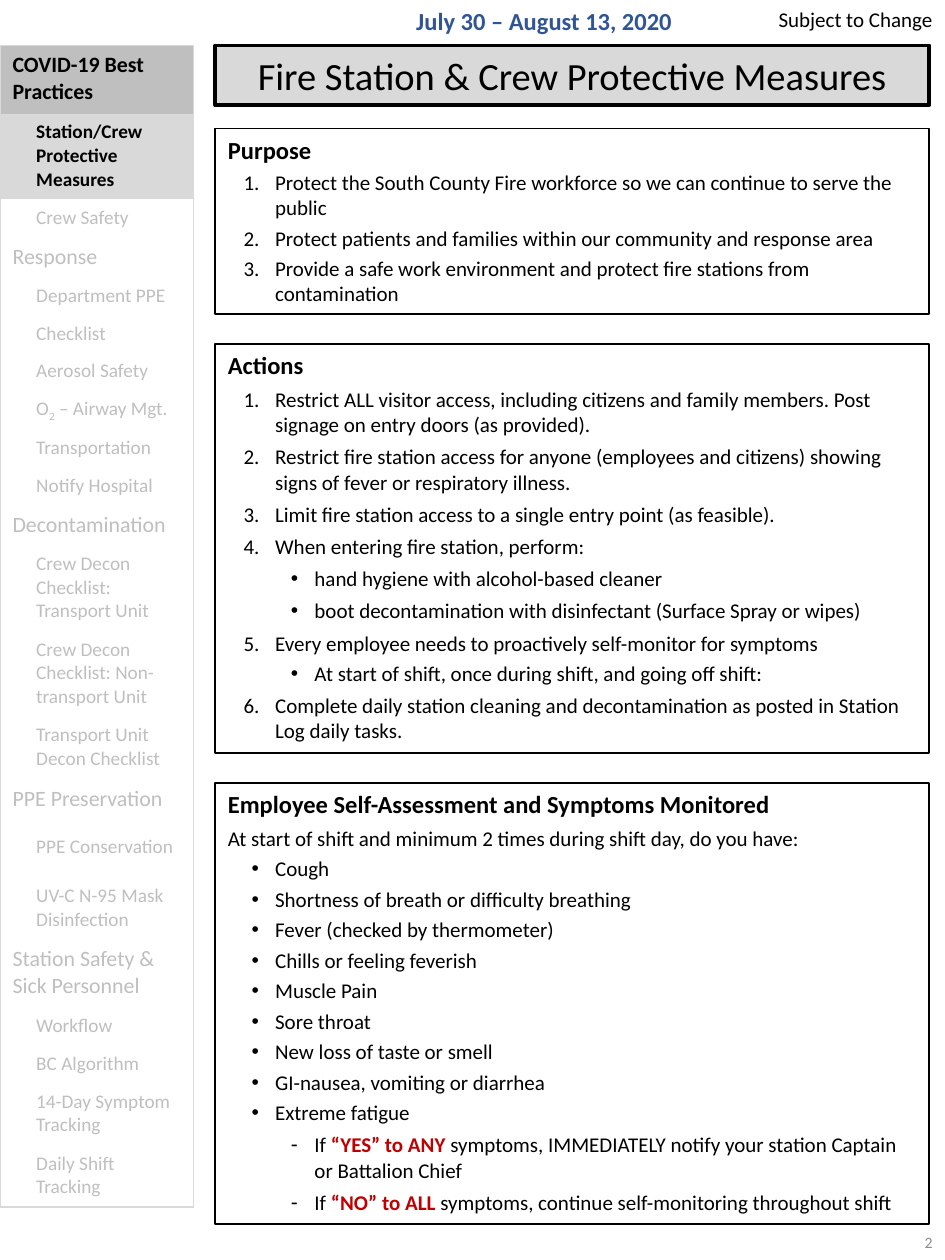
"""Build the fire station protective measures slide."""
from pptx import Presentation
from pptx.dml.color import RGBColor
from pptx.enum import text as txt
from pptx.oxml import parse_xml
from pptx.oxml.ns import nsdecls
from pptx.util import Pt

PLAIN = "{2D5ABB26-0587-4C30-8999-92F81FD0307C}"
ALIGN = txt.PP_ALIGN
LEFT, WIDTH = 123, 408

KINDS = {
    "head": (0, 0, 0, None),
    "text": (0, 0, 0, None),
    "num": (0, 27, 18, "num"),
    "dot": (0, 27, 13.5, "•"),
    "sub": (1, 49.5, 13.5, "•"),
    "dash": (3, 49.5, 13.5, "-"),
}
PURPOSE = [
    ("head", "Purpose", 0),
    ("num", "Protect the South County Fire workforce so we can continue to serve the public", 3),
    ("num", "Protect patients and families within our community and response area", 3),
    ("num", "Provide a safe work environment and protect fire stations from contamination", 3),
]
ACTIONS = [
    ("head", "Actions", 0),
    ("num", "Restrict ALL visitor access, including citizens and family members. "
            "Post signage on entry doors (as provided).", 4),
    ("num", "Restrict fire station access for anyone (employees and citizens) "
            "showing signs of fever or respiratory illness.", 4),
    ("num", "Limit fire station access to a single entry point (as feasible).", 4),
    ("num", "When entering fire station, perform:", 4),
    ("sub", "hand hygiene with alcohol-based cleaner", 4),
    ("sub", "boot decontamination with disinfectant (Surface Spray or wipes)", 4),
    ("num", "Every employee needs to proactively self-monitor for symptoms", 4),
    ("sub", "At start of shift, once during shift, and going off shift:", 3),
    ("num", "Complete daily station cleaning and decontamination as posted in "
            "Station Log daily tasks.", 4),
]
SIGNS = ["Cough", "Shortness of breath or difficulty breathing",
         "Fever (checked by thermometer)", "Chills or feeling feverish",
         "Muscle Pain", "Sore throat", "New loss of taste or smell",
         "GI-nausea, vomiting or diarrhea", "Extreme fatigue"]
CHECKS = [
    ("head", "Employee Self-Assessment and Symptoms Monitored", 0),
    ("text", "At start of shift and minimum 2 times during shift day, do you have:", 4),
    *[("dot", sign, 3) for sign in SIGNS],
    ("dash", "If |“YES” to ANY |symptoms, IMMEDIATELY notify your station "
             "Captain or Battalion Chief", 4),
    ("dash", "If |“NO” to ALL |symptoms, continue self-monitoring throughout shift", 4),
]
MENU = [
    ("COVID-19 Best Practices", 39,
     [("Station/Crew Protective Measures", 49), ("Crew Safety", 21.6)]),
    ("Response", 23,
     [(name, 21.6) for name in ("Department PPE", "Checklist", "Aerosol Safety",
                                "O|2| – Airway Mgt.", "Transportation", "Notify Hospital")]),
    ("Decontamination", 23,
     [("Crew Decon Checklist: Transport Unit", 49),
      ("Crew Decon Checklist: Non-transport Unit", 49),
      ("Transport Unit Decon Checklist", 35.4)]),
    ("PPE Preservation", 28.2,
     [("PPE Conservation", 28.2), ("UV-C N-95 Mask Disinfection", 35.4)]),
    ("Station Safety & Sick Personnel", 39,
     [("Workflow", 21.6), ("BC Algorithm", 21.6),
      ("14-Day Symptom Tracking", 35.4), ("Daily Shift Tracking", 35.4)]),
]


def tint(hue):
    return RGBColor.from_string(hue)


def warn(run):
    run.font.bold = True
    run.font.color.rgb = tint("C00000")


def lower(run):
    run.font._element.set("baseline", "-25000")


class Page:
    def __init__(self, slide, face="Calibri"):
        self.slide = slide
        self.face = face

    def letter(self, para, words, size, hue="000000", bold=False, mark=warn):
        for i, part in enumerate(words.split("|")):
            run = para.add_run()
            run.text = part
            if i % 2:
                mark(run)
        font = para.font
        font.name, font.size, font.bold = self.face, Pt(size), bold
        font.color.rgb = tint(hue)

    def place(self, shape, left, top, width, height, anchor):
        shape.left, shape.top = Pt(left), Pt(top)
        shape.width, shape.height = Pt(width), Pt(height)
        frame = shape.text_frame
        frame.word_wrap = True
        frame.auto_size = txt.MSO_AUTO_SIZE.NONE
        frame.vertical_anchor = anchor
        frame.margin_left = frame.margin_right = Pt(7.2)
        frame.margin_top = frame.margin_bottom = Pt(3.6)
        return frame

    def label(self, words, left, top, width, height, size, hue="000000",
              bold=False, align=ALIGN.RIGHT, anchor=txt.MSO_ANCHOR.TOP):
        box = self.slide.shapes.add_textbox(0, 0, 0, 0)
        para = self.place(box, left, top, width, height, anchor).paragraphs[0]
        para.alignment = align
        self.letter(para, words, size, hue, bold)

    def title(self, words, top, height):
        shape = self.slide.shapes.title
        frame = self.place(shape, LEFT, top, WIDTH, height, txt.MSO_ANCHOR.MIDDLE)
        shape.fill.solid()
        shape.fill.fore_color.rgb = tint("D9D9D9")
        shape.line.color.rgb = tint("000000")
        shape.line.width = Pt(2.25)
        para = frame.paragraphs[0]
        para.alignment = ALIGN.CENTER
        self.letter(para, words, 22)

    def bullet(self, para, kind):
        para.level, left, hang, sign = KINDS[kind]
        props = para._p.get_or_add_pPr()
        props.set("marL", str(Pt(left)))
        props.set("indent", str(-Pt(hang)))
        if sign is None:
            tags = ["<a:buNone %s/>"]
        elif sign == "num":
            tags = ['<a:buFont %s typeface="+mj-lt"/>', '<a:buAutoNum %s type="arabicPeriod"/>']
        else:
            tags = ['<a:buFont %s typeface="Arial"/>', '<a:buChar %s char="' + sign + '"/>']
        for tag in tags:
            props.append(parse_xml(tag % nsdecls("a")))

    def panel(self, slot, top, height, items):
        shape = self.slide.placeholders[slot]
        frame = self.place(shape, LEFT, top, WIDTH, height, txt.MSO_ANCHOR.TOP)
        shape.line.color.rgb = tint("000000")
        shape.line.width = Pt(1)
        for i, (kind, words, gap) in enumerate(items):
            para = frame.add_paragraph() if i else frame.paragraphs[0]
            self.bullet(para, kind)
            para.alignment = ALIGN.LEFT
            para.space_before = Pt(gap)
            if words == "Cough":
                para.line_spacing = Pt(14.2)
            head = kind == "head"
            self.letter(para, words, 14 if head else 12, bold=head)

    def edge(self, cell, sides):
        props = cell._tc.get_or_add_tcPr()
        for i, side in enumerate(sides):
            props.insert(i, parse_xml(
                f'<a:ln{side} {nsdecls("a")} w="{Pt(1)}"><a:solidFill>'
                f'<a:srgbClr val="D9D9D9"/></a:solidFill></a:ln{side}>'))

    def menu(self, top, width, groups):
        rows = []
        for name, high, items in groups:
            rows.append((name, high, 12.5, 0))
            rows += [(item, tall, 11, 13.5) for item, tall in items]
        total = sum(row[1] for row in rows)
        table = self.slide.shapes.add_table(
            len(rows), 1, 0, Pt(top), Pt(width), Pt(total)).table
        table.first_row = table.horz_banding = False
        table._tbl.tblPr[0].text = PLAIN
        fills = ["BFBFBF", "D9D9D9"]
        for i, (words, high, size, left) in enumerate(rows):
            table.rows[i].height = Pt(high)
            cell = table.cell(i, 0)
            live = i < len(fills)
            if live:
                cell.fill.solid()
                cell.fill.fore_color.rgb = tint(fills[i])
            else:
                cell.fill.background()
            last = i == len(rows) - 1
            self.edge(cell, ["L", "R"] + ["T"] * (i == 0) + ["B"] * last)
            para = cell.text_frame.paragraphs[0]
            para._p.get_or_add_pPr().set("marL", str(Pt(left)))
            self.letter(para, words, size, "000000" if live else "BFBFBF", live, lower)


def main():
    deck = Presentation()
    deck.slide_width, deck.slide_height = Pt(540), Pt(720)
    slide = deck.slides.add_slide(deck.slide_layouts[4])
    page = Page(slide)
    page.label("2", 418.5, 691, 121.5, 38, 9, "8C8C8C", anchor=txt.MSO_ANCHOR.MIDDLE)
    page.label("July 30 – August 13, 2020", 222.5, 0, 177, 24.5, 14, "2F5597",
               True, ALIGN.CENTER)
    page.label("Subject to Change", 418.5, 0, 121.5, 22, 12)
    page.menu(26, 110.5, MENU)
    page.title("Fire Station & Crew Protective Measures", 26, 34)
    page.panel(1, 73.5, 106, PURPOSE)
    page.panel(2, 196.5, 234, ACTIONS)
    page.panel(3, 447.5, 252, CHECKS)
    spare = slide.placeholders[4]._element
    spare.getparent().remove(spare)
    deck.save("out.pptx")


if __name__ == "__main__":
    main()
